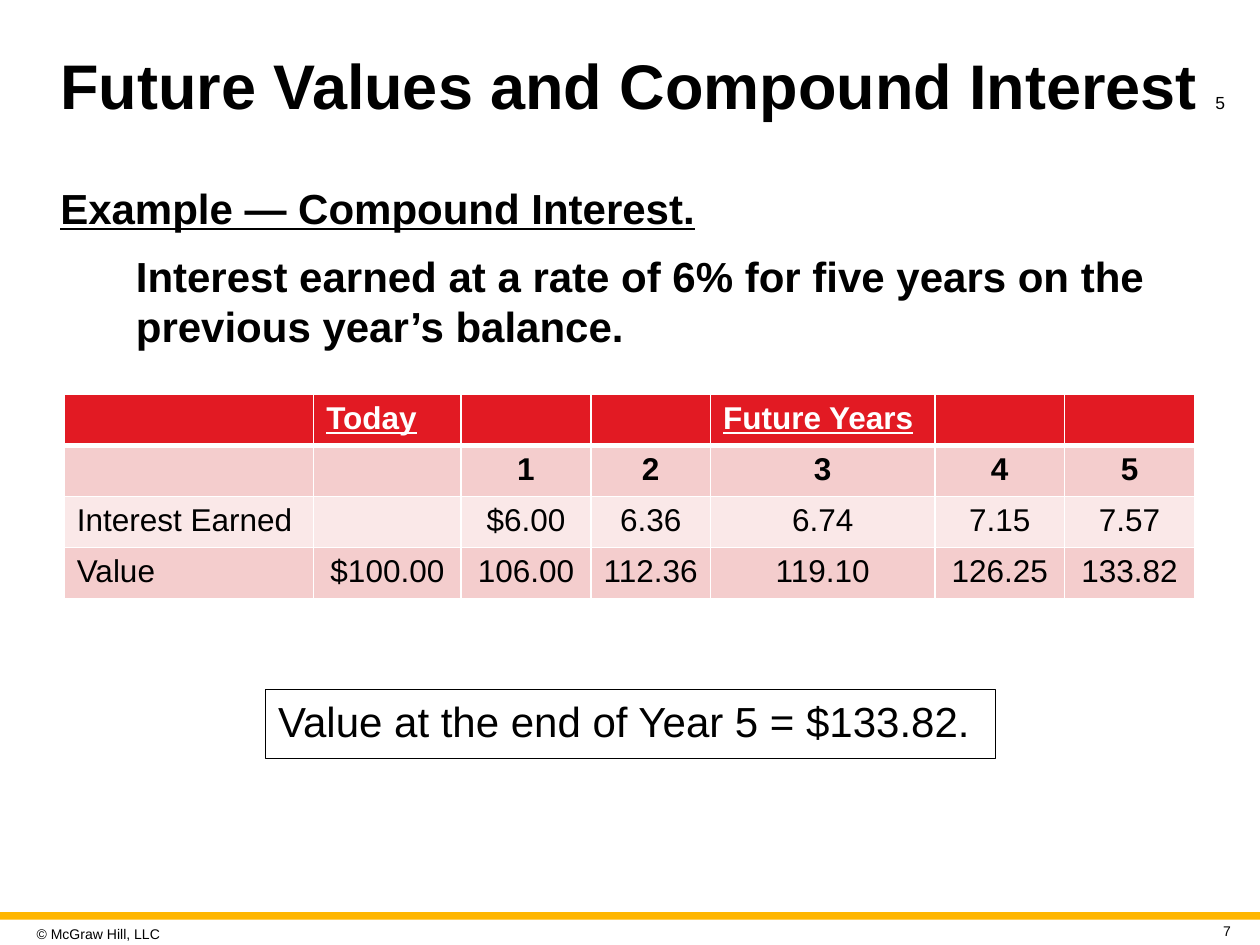
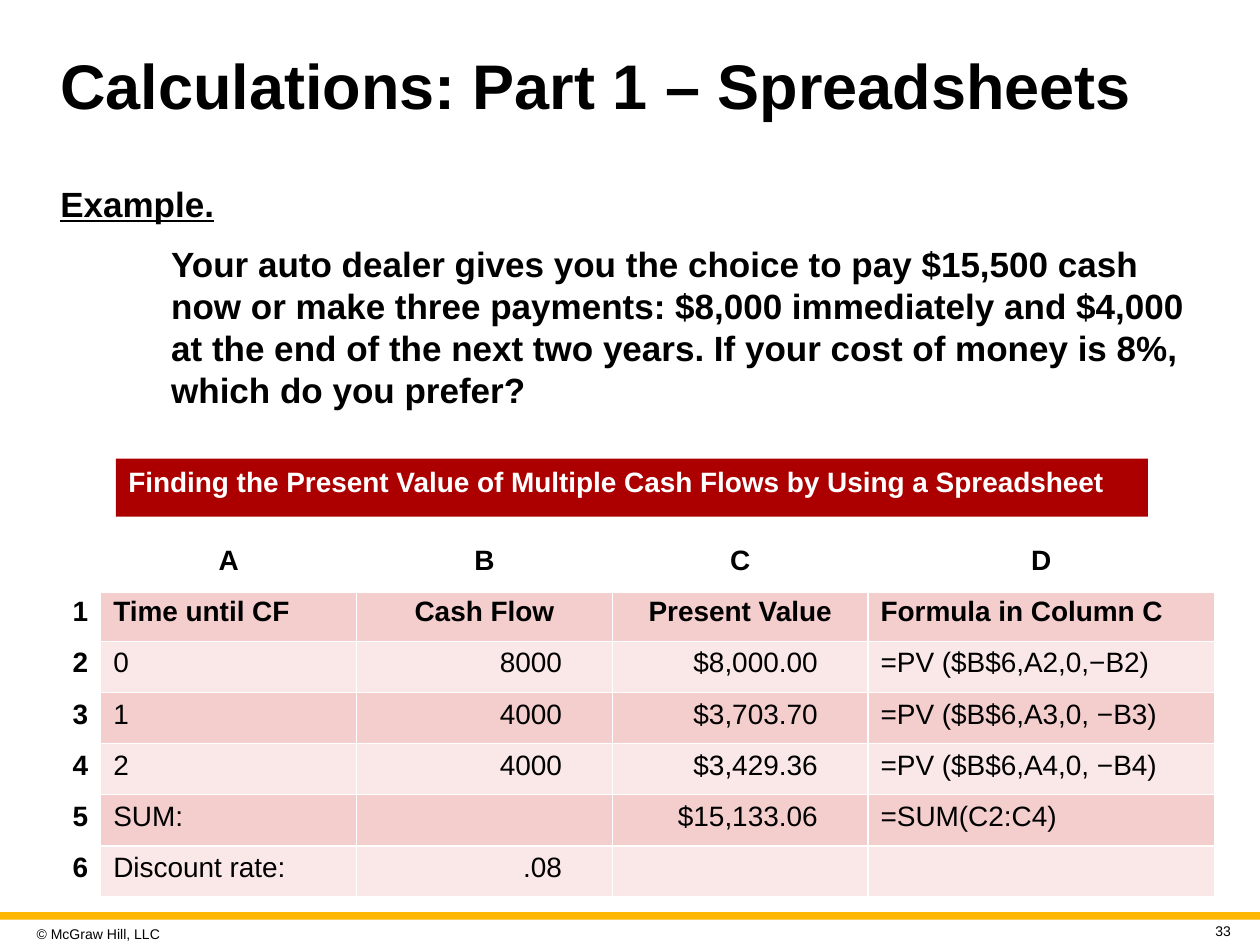
from lxml.etree import SubElement
from pptx import Presentation
from pptx.dml.color import RGBColor
from pptx.enum.shapes import MSO_SHAPE as Shape
from pptx.enum.text import MSO_ANCHOR as Anchor, PP_ALIGN as Align
from pptx.oxml.ns import qn
from pptx.util import Inches, Pt

THEME = {
    "font": "Arial",
    "colors": {
        "text": "000000", "white": "FFFFFF", "gold": "FFB600", "header": "E21A23",
        "banner": "AC0000", "bands": ("F4CDCD", "FAE8E8"),
    },
    "sizes": {"title": 36, "counter": 10, "footer": 8},
}
COLORS, SIZES = THEME["colors"], THEME["sizes"]

W, H = 10, 7.5
MARGIN, BODY_TOP, BODY_W = 0.38, 1.4, 9.25
COPYRIGHT = "© McGraw Hill, LLC"

SLIDES = [
    {
        "title": "Future Values and Compound Interest ", "counter": "5",
        "title_w": 9.49, "number": "7",
        "heading": "Example — Compound Interest.",
        "body": "Interest earned at a rate of 6% for five years on the "
                "previous year’s balance.",
        "body_size": 24, "indent": 0.6, "body_h": 1.52,
        "callout": {"text": "Value at the end of Year 5 = $133.82.",
                    "box": (2.11, 5.47, 5.79, 0.55), "line": COLORS["text"],
                    "format": {"size": 24}},
        "table": {
            "style": "interest", "at": (0.51, 3.13), "height": 1.62, "size": 18,
            "cols": (1.98, 1.17, 1.03, 0.95, 1.78, 1.03, 1.03),
            "rows": [
                ("", "Today", "", "", "Future Years", "", ""),
                ("", "", "1", "2", "3", "4", "5"),
                ("Interest Earned", "", "$6.00", "6.36", "6.74", "7.15", "7.57"),
                ("Value", "$100.00", "106.00", "112.36", "119.10", "126.25", "133.82"),
            ],
        },
    },
    {
        "title": "Calculations: Part 1 – Spreadsheets", "counter": "",
        "title_w": BODY_W, "number": "33",
        "heading": "Example.",
        "body": "Your auto dealer gives you the choice to pay $15,500 cash now or make "
                "three payments: $8,000 immediately and $4,000 at the end of the next "
                "two years. If your cost of money is 8%, which do you prefer?",
        "body_size": 20, "indent": 0.88, "body_h": 1.94,
        "callout": {"text": "Finding the Present Value of Multiple Cash Flows "
                            "by Using a Spreadsheet",
                    "box": (0.92, 3.64, 8.19, 0.46), "fill": COLORS["banner"],
                    "format": {"size": 16, "bold": True, "color": COLORS["white"]}},
        "table": {
            "style": "spreadsheet", "at": (MARGIN, 4.28), "height": 2.84, "size": 16,
            "cols": (0.42, 2.03, 2.03, 2.03, 2.75),
            "rows": [
                ("", "A", "B", "C", "D"),
                ("1", "Time until CF", "Cash Flow", "Present Value", "Formula in Column C"),
                ("2", "0", "8000", "$8,000.00", "=PV ($B$6,A2,0,−B2)"),
                ("3", "1", "4000", "$3,703.70", "=PV ($B$6,A3,0, −B3)"),
                ("4", "2", "4000", "$3,429.36", "=PV ($B$6,A4,0, −B4)"),
                ("5", "SUM:", "", "$15,133.06", "=SUM(C2:C4)"),
                ("6", "Discount rate:", ".08", "", ""),
            ],
        },
    },
]


def rgb(color):
    return RGBColor.from_string(color)


def add_run(p, text, size, color=COLORS["text"], **font):
    r = p.add_run()
    r.text = text
    r.font.color.rgb = rgb(color)
    for name, value in {"name": THEME["font"], "size": Pt(size), **font}.items():
        setattr(r.font, name, value)


def set_margins(target, x=0.1, y=0.05, right=None):
    sides = {"left": x, "top": y, "right": x if right is None else right, "bottom": y}
    for side, value in sides.items():
        setattr(target, f"margin_{side}", Inches(value))


def add_box(s, box, fill=None, line=None, anchor=Anchor.TOP, inset=0.1):
    """Add a rectangle, or a text box if it has neither fill nor line."""
    box = [Inches(v) for v in box]
    if fill or line:
        sp = s.shapes.add_shape(Shape.RECTANGLE, *box)
        sp.shadow.inherit = False
        if fill:
            sp.fill.solid()
            sp.fill.fore_color.rgb = rgb(fill)
        else:
            sp.fill.background()
        if line:
            sp.line.color.rgb = rgb(line)
            sp.line.width = Pt(0.75)
        else:
            sp.line.fill.background()
    else:
        sp = s.shapes.add_textbox(*box)
    tf = sp.text_frame
    tf.word_wrap = True
    tf.vertical_anchor = anchor
    set_margins(tf, inset)
    tf.paragraphs[0].alignment = Align.LEFT
    return tf


def add_frame(s, number):
    """Add the gold band, copyright line and slide number."""
    add_box(s, (0, 7.24, W, 0.06), fill=COLORS["gold"])
    for text, box, align in ((COPYRIGHT, (0.24, 7.29, 1.35, 0.24), Align.LEFT),
                             (number, (9.43, 7.3, 0.39, 0.18), Align.RIGHT)):
        p = add_box(s, box, anchor=Anchor.MIDDLE, inset=0.05).paragraphs[0]
        p.alignment = align
        add_run(p, text, SIZES["footer"])


def add_title(s, data):
    box = (MARGIN, 0.26, data["title_w"], 0.9)
    p = add_box(s, box, anchor=Anchor.MIDDLE).paragraphs[0]
    p.line_spacing = 0.9
    add_run(p, data["title"], SIZES["title"], bold=True)
    if data["counter"]:
        add_run(p, data["counter"], SIZES["counter"])


def add_body(s, data):
    tf = add_box(s, (MARGIN, BODY_TOP, BODY_W, data["body_h"]))
    add_run(tf.paragraphs[0], data["heading"], data["body_size"], bold=True, underline=True)
    p = tf.add_paragraph()
    p.space_before = Pt(10)
    pPr = p._p.get_or_add_pPr()
    pPr.set("marL", str(Inches(data["indent"])))
    pPr.set("indent", "0")
    add_run(p, data["body"], data["body_size"], bold=True)


def add_callout(s, text, box, format, **look):
    add_run(add_box(s, box, **look).paragraphs[0], text, **format)


def interest_cell(row, col):
    header = row == 0
    return {
        "fill": COLORS["header"] if header else COLORS["bands"][(row - 1) % 2],
        "align": Align.CENTER if row and col else Align.LEFT,
        "font": {"bold": row < 2, "underline": header,
                 "color": COLORS["white" if header else "text"]},
    }


def spreadsheet_cell(row, col):
    label = row == 0 or col == 0
    amount = row > 1 and col in (2, 3)
    if amount or col == 0:
        align = Align.RIGHT
    elif row == 0 or (row == 1 and col in (2, 3)):
        align = Align.CENTER
    else:
        align = Align.LEFT
    return {
        "fill": COLORS["white"] if label else COLORS["bands"][(row - 1) % 2],
        "align": align, "right": 0.4 if amount else 0.1,
        "font": {"bold": label or row == 1},
    }


CELL_STYLES = {"interest": interest_cell, "spreadsheet": spreadsheet_cell}


def set_borders(cell, widths):
    tcPr = cell._tc.get_or_add_tcPr()
    for i, (side, width) in enumerate(widths.items()):
        ln = SubElement(tcPr, qn(f"a:ln{side}"), w=str(Pt(width)))
        fill = SubElement(ln, qn("a:solidFill"))
        SubElement(fill, qn("a:srgbClr"), val=COLORS["white"])
        tcPr.insert(i, ln)


def add_table(s, style, at, height, size, cols, rows):
    dims = (*at, sum(cols), height)
    table = s.shapes.add_table(len(rows), len(cols), *[Inches(v) for v in dims]).table
    for column, width in zip(table.columns, cols):
        column.width = Inches(width)
    for i, values in enumerate(rows):
        table.rows[i].height = Inches(height / len(rows))
        for j, text in enumerate(values):
            cell, look = table.cell(i, j), CELL_STYLES[style](i, j)
            cell.fill.solid()
            cell.fill.fore_color.rgb = rgb(look["fill"])
            set_margins(cell, right=look.get("right"))
            set_borders(cell, {"L": 1, "R": 1, "T": 3 if i == 1 else 1,
                               "B": 3 if i == 0 else 1})
            if text:
                p = cell.text_frame.paragraphs[0]
                p.alignment = look["align"]
                add_run(p, text, size, **look["font"])


def main():
    prs = Presentation()
    prs.slide_width, prs.slide_height = Inches(W), Inches(H)
    for data in SLIDES:
        s = prs.slides.add_slide(prs.slide_layouts[6])
        add_frame(s, data["number"])
        add_title(s, data)
        add_body(s, data)
        add_callout(s, **data["callout"])
        add_table(s, **data["table"])
    prs.save("out.pptx")


if __name__ == "__main__":
    main()
